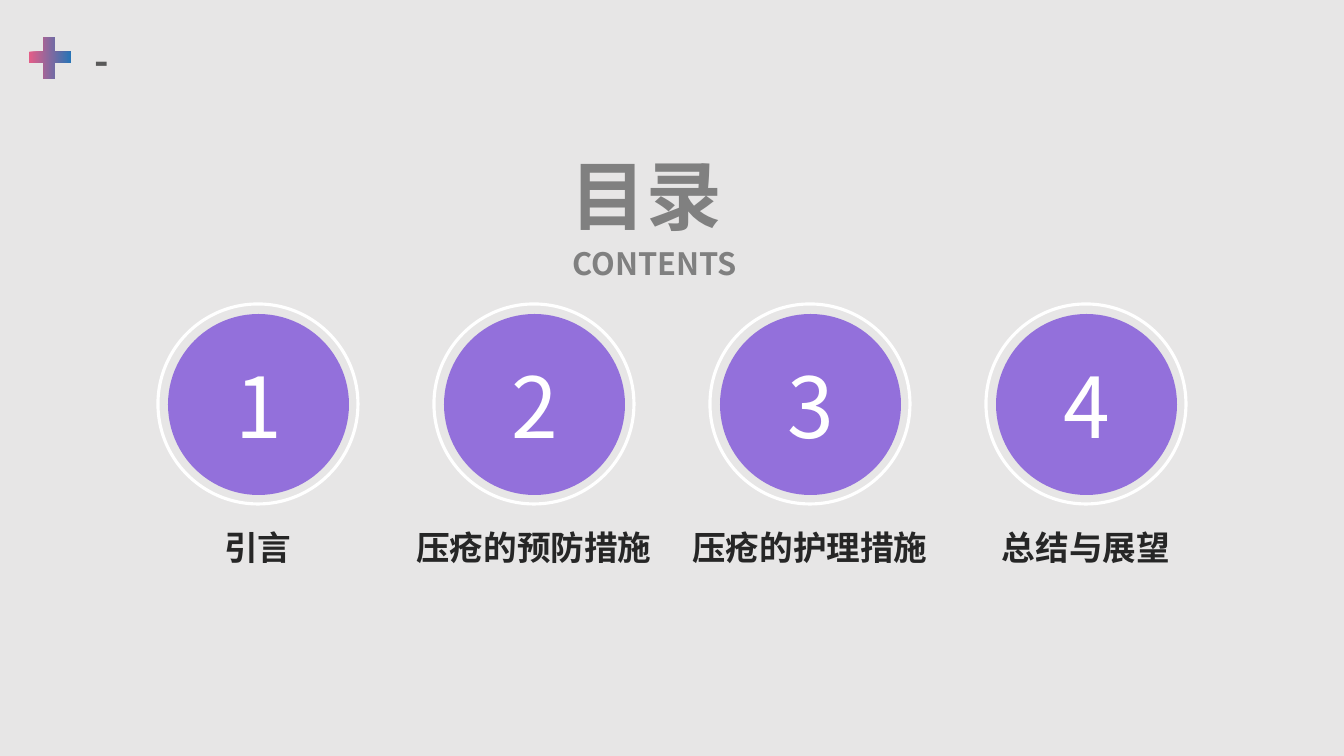
from copy import deepcopy

from lxml import etree
from pptx import Presentation
from pptx import util as u
from pptx.dml.color import RGBColor
from pptx.enum import shapes, text
from pptx.oxml import ns

PX = 12192000 / 1344
FONT = "Noto Sans CJK SC"
BACKGROUND = RGBColor(0xE7, 0xE6, 0xE6)
WHITE = RGBColor(0xFF, 0xFF, 0xFF)
PURPLE = RGBColor(0x93, 0x70, 0xDB)
INK = RGBColor(0x26, 0x26, 0x26)
GREY = RGBColor(0x80, 0x80, 0x80)
DARK_GREY = RGBColor(0x59, 0x59, 0x59)
CROSS_STOPS = [
    (0, RGBColor(0xE5, 0x5D, 0x87)),
    (0.57, RGBColor(0x78, 0x6A, 0xA2)),
    (1, RGBColor(0x26, 0x74, 0xB6)),
]


def px(*lengths):
    return [u.Emu(round(length * PX)) for length in lengths]


def write(shape, words, size, color, bold=True, align=text.PP_ALIGN.CENTER):
    shape.text_frame.word_wrap = True
    paragraph = shape.text_frame.paragraphs[0]
    paragraph.text = words
    paragraph.alignment = align
    font = paragraph.font
    font.size, font.bold, font.name = u.Pt(size), bold, FONT
    font.color.rgb = color
    # Chinese characters take the East Asian typeface
    defaults = paragraph._p.pPr.find(ns.qn("a:defRPr"))
    etree.SubElement(defaults, ns.qn("a:ea"), typeface=FONT)
    return paragraph


prs = Presentation()
prs.slide_width, prs.slide_height = px(1344, 756)
slide = prs.slides.add_slide(prs.slide_layouts[6])
slide.background.fill.solid()
slide.background.fill.fore_color.rgb = BACKGROUND

# Gradient cross in the corner
builder = slide.shapes.build_freeform(71, 52, scale=PX)
builder.add_line_segments([
    (55, 52), (55, 37), (44, 37), (44, 52), (29, 52), (29, 63),
    (44, 63), (44, 79), (55, 79), (55, 63), (71, 63),
])
cross = builder.convert_to_shape()
cross.shadow.inherit = False
cross.line.fill.background()
cross.fill.gradient()
cross.fill.gradient_angle = 0
first_stop = cross._element.spPr.find(".//" + ns.qn("a:gs"))
first_stop.addnext(deepcopy(first_stop))
for stop, (position, color) in zip(cross.fill.gradient_stops, CROSS_STOPS):
    stop.position = position
    stop.color.rgb = color

# Header
header = slide.shapes.add_textbox(*px(85, 34, 1209, 58))
header.text_frame.vertical_anchor = text.MSO_ANCHOR.MIDDLE
header_line = write(header, "-", 28, DARK_GREY, align=text.PP_ALIGN.LEFT)
header_line.line_spacing = 0.9

# Title
title = slide.shapes.add_textbox(*px(561, 144, 187, 102))
write(title, "目录", 54, GREY, align=text.PP_ALIGN.JUSTIFY)
subtitle = slide.shapes.add_textbox(*px(524, 240, 261, 47))
write(subtitle, "CONTENTS", 22, GREY)

# Numbered chapters, evenly spaced
chapters = ["引言", "压疮的预防措施", "压疮的护理措施", "总结与展望"]
for index, chapter in enumerate(chapters):
    left = 118 + 276 * index

    disc = slide.shapes.add_shape(shapes.MSO_SHAPE.OVAL, *px(left + 50, 314, 181, 181))
    disc.shadow.inherit = False
    disc.fill.solid()
    disc.fill.fore_color.rgb = PURPLE
    disc.line.fill.background()
    disc.text_frame.vertical_anchor = text.MSO_ANCHOR.MIDDLE
    write(disc, str(index + 1), 60, WHITE, bold=False)

    ring = slide.shapes.add_shape(shapes.MSO_SHAPE.OVAL, *px(left + 40, 304, 200, 200))
    ring.shadow.inherit = False
    ring.fill.background()
    ring.line.color.rgb = WHITE
    ring.line.width = u.Pt(2.25)

    label = slide.shapes.add_textbox(*px(left, 522, 280, 50))
    write(label, chapter, 24, INK)

prs.save("out.pptx")
